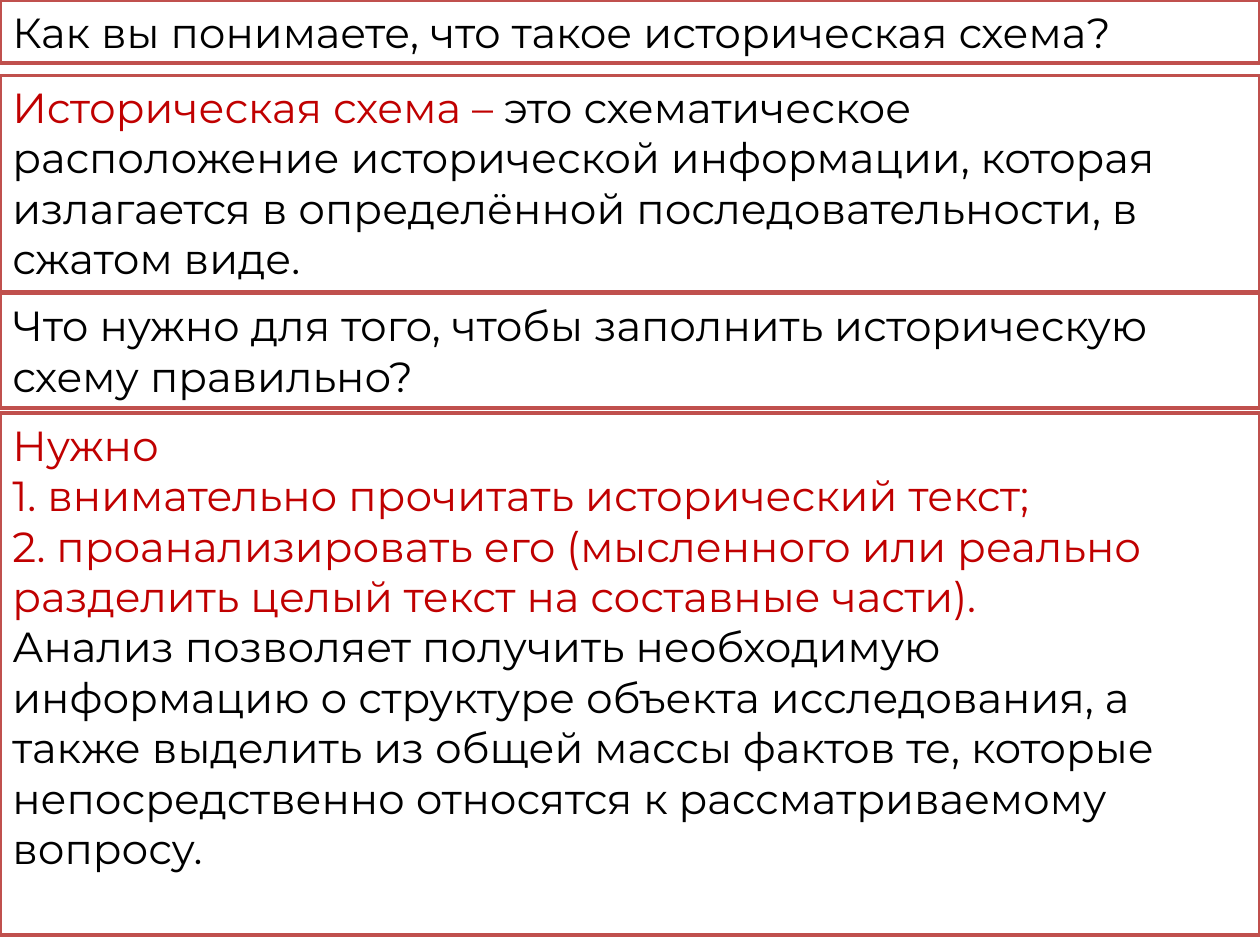
import pptx
import pptx.dml.color
import pptx.enum.shapes
import pptx.enum.text
import pptx.util

Cm = pptx.util.Cm
BLACK, RED, BORDER, WHITE = "000000", "C00000", "C0504D", "FFFFFF"


def color(value):
    return pptx.dml.color.RGBColor.from_string(value)


def add_text(para, text, font="Montserrat", size=24, fill=BLACK):
    span = para.add_run()
    span.text = text
    span.font.name = font
    span.font.size = pptx.util.Pt(size)
    span.font.color.rgb = color(fill)


deck = pptx.Presentation()
deck.slide_width, deck.slide_height = Cm(25.4), Cm(19.05)
page = deck.slides.add_slide(deck.slide_layouts[6])

# Each panel: top and height in cm, then paragraphs of (text, colour) spans
panels = [
    (0, 1.27, [[("Как вы понимаете, что такое историческая схема?", BLACK)]]),
    (1.52, 4.37, [[
        ("Историческая схема – ", RED),
        ("это схематическое расположение исторической информации, которая "
         "излагается в определённой последовательности, в сжатом виде.", BLACK),
    ]]),
    (5.92, 2.31, [[("Что нужно для того, чтобы заполнить историческую схему правильно?", BLACK)]]),
    (8.33, 10.52, [
        [("Нужно", RED)],
        [("1. внимательно прочитать исторический текст;", RED)],
        [("2. проанализировать его (мысленного или реально разделить целый "
          "текст на составные части).", RED)],
        [("Анализ позволяет получить необходимую информацию о структуре объекта "
          "исследования, а также выделить из общей массы фактов те, которые "
          "непосредственно относятся к рассматриваемому вопросу.", BLACK)],
    ]),
]

for top, height, paragraphs in panels:
    box = page.shapes.add_shape(
        pptx.enum.shapes.MSO_SHAPE.RECTANGLE, 0, Cm(top), deck.slide_width, Cm(height))
    box.shadow.inherit = False
    box.fill.solid()
    box.fill.fore_color.rgb = color(WHITE)
    box.line.color.rgb = color(BORDER)
    box.line.width = pptx.util.Pt(2)
    frame = box.text_frame
    frame.word_wrap = True
    frame.vertical_anchor = pptx.enum.text.MSO_ANCHOR.TOP
    for index, spans in enumerate(paragraphs):
        para = frame.add_paragraph() if index else frame.paragraphs[0]
        para.alignment = pptx.enum.text.PP_ALIGN.LEFT
        if spans[0][0].startswith("1."):
            properties = para._p.get_or_add_pPr()
            properties.set("marL", str(Cm(1.42)))
            properties.set("indent", str(-Cm(1.42)))
        for text, fill in spans:
            add_text(para, text, fill=fill)

deck.save("out.pptx")
